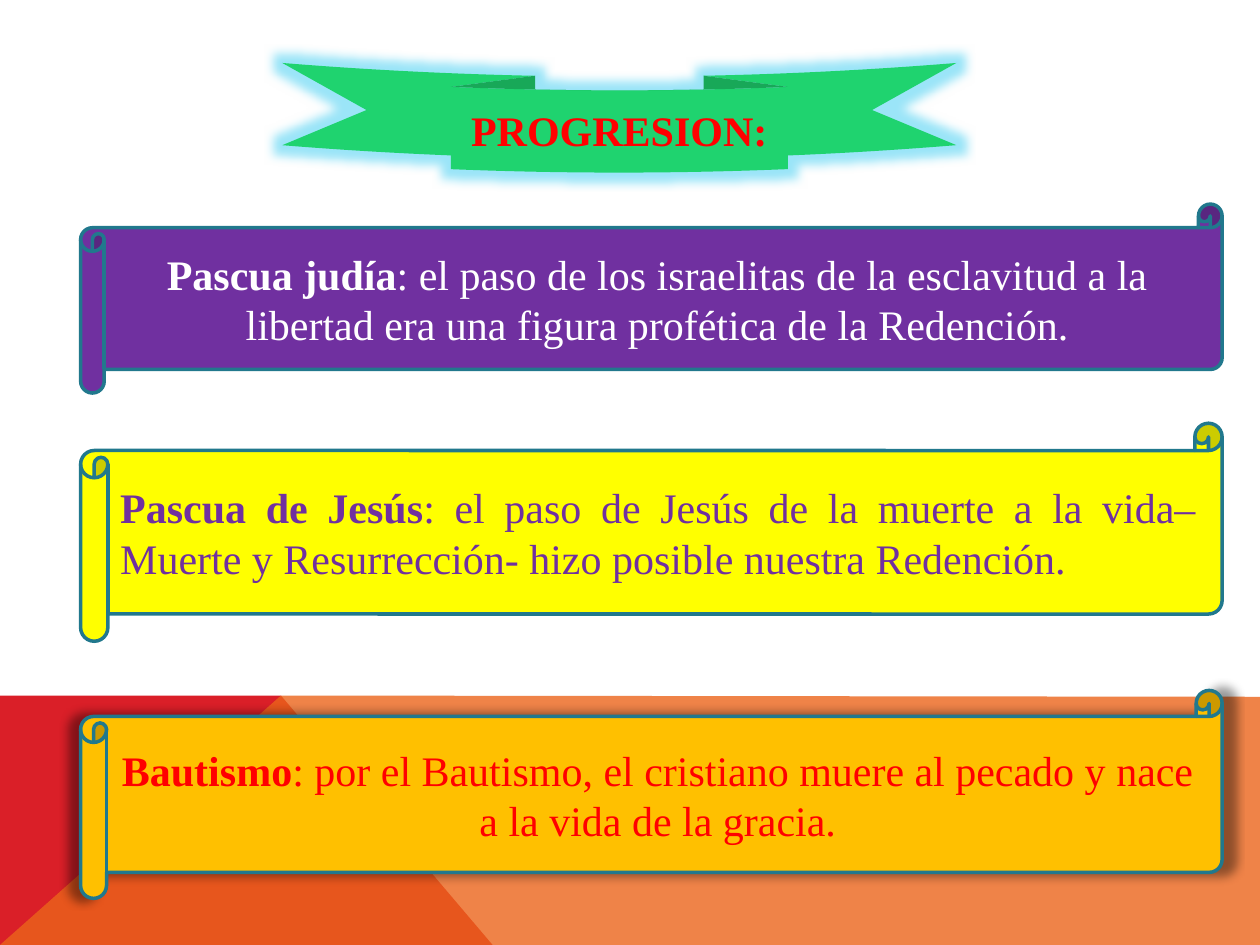
import pptx
import pptx.util
import pptx.dml.color
import pptx.enum.shapes
import pptx.enum.text
import pptx.oxml
import pptx.oxml.ns
from dataclasses import dataclass

Inches, Pt = pptx.util.Inches, pptx.util.Pt
RGB = pptx.dml.color.RGBColor.from_string
Kind = pptx.enum.shapes.MSO_SHAPE
Align = pptx.enum.text.PP_ALIGN


@dataclass
class Theme:
    font: str = "Times New Roman"
    size: float = 24
    edge: float = 2
    red: str = "DA1F28"
    orange: str = "EB641B"
    green: str = "1FD36F"
    glow: str = "9BE5F8"
    purple: str = "7030A0"
    yellow: str = "FFFF00"
    gold: str = "FFC000"
    teal: str = "21788D"
    white: str = "FFFFFF"
    bright: str = "FF0000"


theme = Theme()


def node(xml):
    return pptx.oxml.parse_xml(xml.replace(" ", f" {pptx.oxml.ns.nsdecls('a')} ", 1))


def banner(kind, box, fill, ink, align, words):
    shape = slide.shapes.add_shape(kind, *map(Inches, box))
    shape.shadow.inherit = False
    shape.fill.solid()
    shape.fill.fore_color.rgb = RGB(fill)
    shape.line.fill.background()
    frame = shape.text_frame
    frame.word_wrap = True
    frame.vertical_anchor = pptx.enum.text.MSO_ANCHOR.MIDDLE
    para = frame.paragraphs[0]
    para.alignment = align
    para.font.name = theme.font
    para.font.size = Pt(theme.size)
    para.font.color.rgb = RGB(ink)
    for i, text in enumerate(words):
        run = para.add_run()
        run.text = text
        run.font.bold = i == 0
    return shape


deck = pptx.Presentation()
deck.slide_width, deck.slide_height = Inches(10), Inches(7.5)
slide = deck.slides.add_slide(deck.slide_layouts[6])

bands = [
    ([(0, 7.5), (0, 5.52), (2.23, 5.52), (3.91, 7.5)], theme.red, 100),
    ([(0, 7.5), (2.23, 5.52), (10, 5.53), (10, 7.5)], theme.orange, 80),
]
for points, color, alpha in bands:
    points = [(Inches(x), Inches(y)) for x, y in points]
    path = slide.shapes.build_freeform(*points[0])
    path.add_line_segments(points[1:], close=True)
    band = path.convert_to_shape()
    band.shadow.inherit = False
    band.fill.solid()
    band.fill.fore_color.rgb = RGB(color)
    band.line.fill.background()
    if alpha < 100:
        tint = band._element.spPr.find(".//" + pptx.oxml.ns.qn("a:srgbClr"))
        tint.append(node(f'<a:alpha val="{alpha * 1000}"/>'))

ribbon = banner(Kind.CURVED_DOWN_RIBBON, (2.24, 0.5, 5.35, 0.87),
                theme.green, theme.bright, Align.CENTER, ["PROGRESION:"])
effects = ribbon._element.spPr.find(pptx.oxml.ns.qn("a:effectLst"))
effects.append(node(
    f'<a:glow rad="{Pt(11)}"><a:srgbClr val="{theme.glow}"/></a:glow>'))

scrolls = [
    (1.62, 1.5, theme.purple, theme.white, Align.CENTER, "Pascua judía",
     ": el paso de los israelitas de la esclavitud a la libertad era una figura profética de la Redención."),
    (3.36, 1.73, theme.yellow, theme.purple, Align.JUSTIFY, "Pascua de Jesús",
     ": el paso de Jesús de la muerte a la vida– Muerte y Resurrección- hizo posible nuestra Redención."),
    (5.48, 1.65, theme.gold, theme.bright, Align.CENTER, "Bautismo",
     ": por el Bautismo, el cristiano muere al pecado y nace a la vida de la gracia."),
]
for top, high, fill, ink, align, *words in scrolls:
    scroll = banner(Kind.HORIZONTAL_SCROLL, (0.64, top, 9.06, high), fill, ink, align, words)
    scroll.line.color.rgb = RGB(theme.teal)
    scroll.line.width = Pt(theme.edge)

effects = scroll._element.spPr.find(pptx.oxml.ns.qn("a:effectLst"))
effects.append(node(
    f'<a:outerShdw blurRad="{Pt(5)}" sx="102000" sy="102000" algn="ctr" rotWithShape="0">'
    '<a:srgbClr val="000000"><a:alpha val="40000"/></a:srgbClr></a:outerShdw>'))

deck.save("out.pptx")
